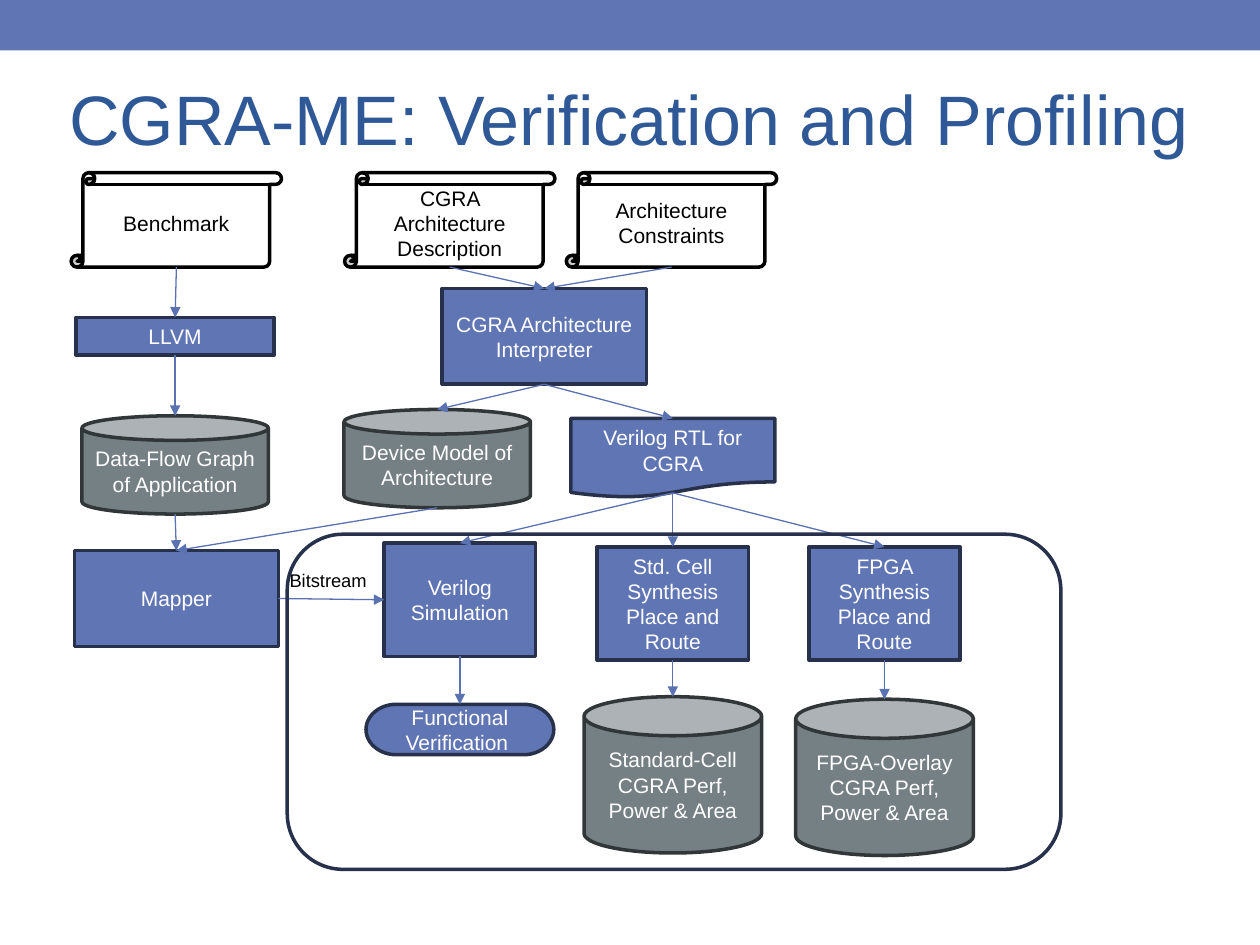
from pptx import Presentation
from pptx.dml.color import RGBColor
from pptx.enum import shapes, text
from pptx.oxml import parse_xml
from pptx.oxml.ns import nsdecls
from pptx.util import Inches, Pt

FONT = "Arial"
BLUE, NAVY, ARROW, TITLE = "6076B4", "28314B", "5A72B1", "2F5897"
GREY, DARK, WHITE, BLACK = "758085", "313638", "FFFFFF", "000000"
MSO = shapes.MSO_SHAPE
TOP, LEFT, BOTTOM, RIGHT = range(4)

# kind: preset, width, height, fill, line, text colour
KINDS = {
    "input": (MSO.VERTICAL_SCROLL, 1.67, 0.75, WHITE, BLACK, BLACK),
    "block": (MSO.RECTANGLE, 1.62, 0.76, BLUE, NAVY, WHITE),
    "process": (MSO.FLOWCHART_PROCESS, 1.62, 0.76, BLUE, NAVY, WHITE),
    "compiler": (MSO.RECTANGLE, 1.57, 0.3, BLUE, NAVY, WHITE),
    "tool": (MSO.RECTANGLE, 1.2, 0.9, BLUE, NAVY, WHITE),
    "document": (MSO.FLOWCHART_DOCUMENT, 1.62, 0.63, BLUE, NAVY, WHITE),
    "end": (MSO.FLOWCHART_TERMINATOR, 1.49, 0.4, BLUE, NAVY, WHITE),
    "model": (MSO.CAN, 1.48, 0.78, GREY, DARK, WHITE),
    "report": (MSO.CAN, 1.41, 1.24, GREY, DARK, WHITE),
}
JOINABLE = {"block", "process", "compiler", "tool", "end"}

# name: kind, centre x, top, text
NODES = {
    "description": ("input", 3.57, 1.37, "CGRA Architecture Description"),
    "interpreter": ("block", 4.32, 2.29, "CGRA Architecture Interpreter"),
    "device": ("model", 3.47, 3.25, "Device Model of Architecture"),
    "simulation": ("tool", 3.65, 4.31, "Verilog Simulation"),
    "std_cell": ("tool", 5.34, 4.34, "Std. Cell Synthesis Place and Route"),
    "fpga": ("tool", 7.02, 4.34, "FPGA Synthesis Place and Route"),
    "std_cell_report": ("report", 5.34, 5.53, "Standard-Cell CGRA Perf, Power & Area"),
    "fpga_report": ("report", 7.02, 5.55, "FPGA-Overlay CGRA Perf, Power & Area"),
    "llvm": ("compiler", 1.39, 2.52, "LLVM"),
    "mapper": ("process", 1.4, 4.37, "Mapper"),
    "data_flow": ("model", 1.39, 3.3, "Data-Flow Graph of Application"),
    "benchmark": ("input", 1.4, 1.37, "Benchmark"),
    "rtl": ("document", 5.34, 3.32, "Verilog RTL for CGRA"),
    "verification": ("end", 3.65, 5.59, "Functional Verification "),
    "constraints": ("input", 5.33, 1.37, "Architecture Constraints"),
}
FLOWS = [
    ("benchmark", "llvm"), ("llvm", "data_flow"), ("data_flow", "mapper"),
    ("description", "interpreter"), ("constraints", "interpreter"),
    ("interpreter", "device"), ("interpreter", "rtl"), ("device", "mapper"),
    ("rtl", "simulation"), ("rtl", "std_cell"), ("rtl", "fpga"),
    ("std_cell", "std_cell_report"), ("fpga", "fpga_report"),
    ("simulation", "verification"),
]


def rgb(value):
    return RGBColor.from_string(value)


def write(tf, words, size, color, align, anchor):
    tf.word_wrap = True
    tf.auto_size = text.MSO_AUTO_SIZE.NONE
    tf.vertical_anchor = anchor
    p = tf.paragraphs[0]
    p.alignment = align
    r = p.add_run()
    r.text = words
    r.font.name, r.font.size = FONT, Pt(size)
    r.font.color.rgb = rgb(color)


def add_box(s, preset, box, fill=None, line=None):
    sp = s.shapes.add_shape(preset, *map(Inches, box))
    sp.shadow.inherit = False
    if fill:
        sp.fill.solid()
        sp.fill.fore_color.rgb = rgb(fill)
    else:
        sp.fill.background()
    if line:
        sp.line.color.rgb = rgb(line)
        sp.line.width = Pt(2)
    else:
        sp.line.fill.background()
    return sp


def add_node(s, kind, cx, top, words):
    preset, w, h, fill, line, color = KINDS[kind]
    sp = add_box(s, preset, (cx - w / 2, top, w, h), fill, line)
    write(sp.text_frame, words, 12, color, text.PP_ALIGN.CENTER, text.MSO_ANCHOR.MIDDLE)
    return sp


def side_point(name, side):
    kind, cx, top, _ = NODES[name]
    w, h = KINDS[kind][1:3]
    if kind == "document" and side == BOTTOM:
        h *= 0.94  # the wavy edge rises above the bottom of the box
    return {TOP: (cx, top), LEFT: (cx - w / 2, top + h / 2),
            BOTTOM: (cx, top + h), RIGHT: (cx + w / 2, top + h / 2)}[side]


def add_arrow(s, nodes, start, end, start_side=BOTTOM, end_side=TOP):
    points = side_point(start, start_side) + side_point(end, end_side)
    c = s.shapes.add_connector(shapes.MSO_CONNECTOR.STRAIGHT, *map(Inches, points))
    if NODES[start][0] in JOINABLE:
        c.begin_connect(nodes[start], start_side)
    if NODES[end][0] in JOINABLE:
        c.end_connect(nodes[end], end_side)
    c.line.color.rgb = rgb(ARROW)
    c.line.width = Pt(0.75)
    c.line._get_or_add_ln().append(
        parse_xml(f'<a:tailEnd {nsdecls("a")} type="triangle"/>'))
    c._element.spPr.append(parse_xml(f'<a:effectLst {nsdecls("a")}/>'))


def main():
    prs = Presentation()
    prs.slide_width, prs.slide_height = Inches(10), Inches(7.5)
    s = prs.slides.add_slide(prs.slide_layouts[5])

    add_box(s, MSO.RECTANGLE, (0, 0, 10, 0.4), BLUE)
    title = s.shapes.title
    title.left, title.top, title.width, title.height = map(Inches, (0.45, 0.31, 9.23, 1.25))
    write(title.text_frame, "CGRA-ME: Verification and Profiling", 40, TITLE,
          text.PP_ALIGN.LEFT, text.MSO_ANCHOR.MIDDLE)

    nodes = {name: add_node(s, *node) for name, node in NODES.items()}
    for start, end in FLOWS:
        add_arrow(s, nodes, start, end)
    add_arrow(s, nodes, "mapper", "simulation", RIGHT, LEFT)

    label = s.shapes.add_textbox(*map(Inches, (2.2, 4.47, 0.85, 0.29)))
    write(label.text_frame, "Bitstream", 10.5, BLACK,
          text.PP_ALIGN.LEFT, text.MSO_ANCHOR.TOP)
    add_box(s, MSO.ROUNDED_RECTANGLE, (2.28, 4.24, 6.14, 2.66), line=NAVY)

    prs.save("out.pptx")


if __name__ == "__main__":
    main()
